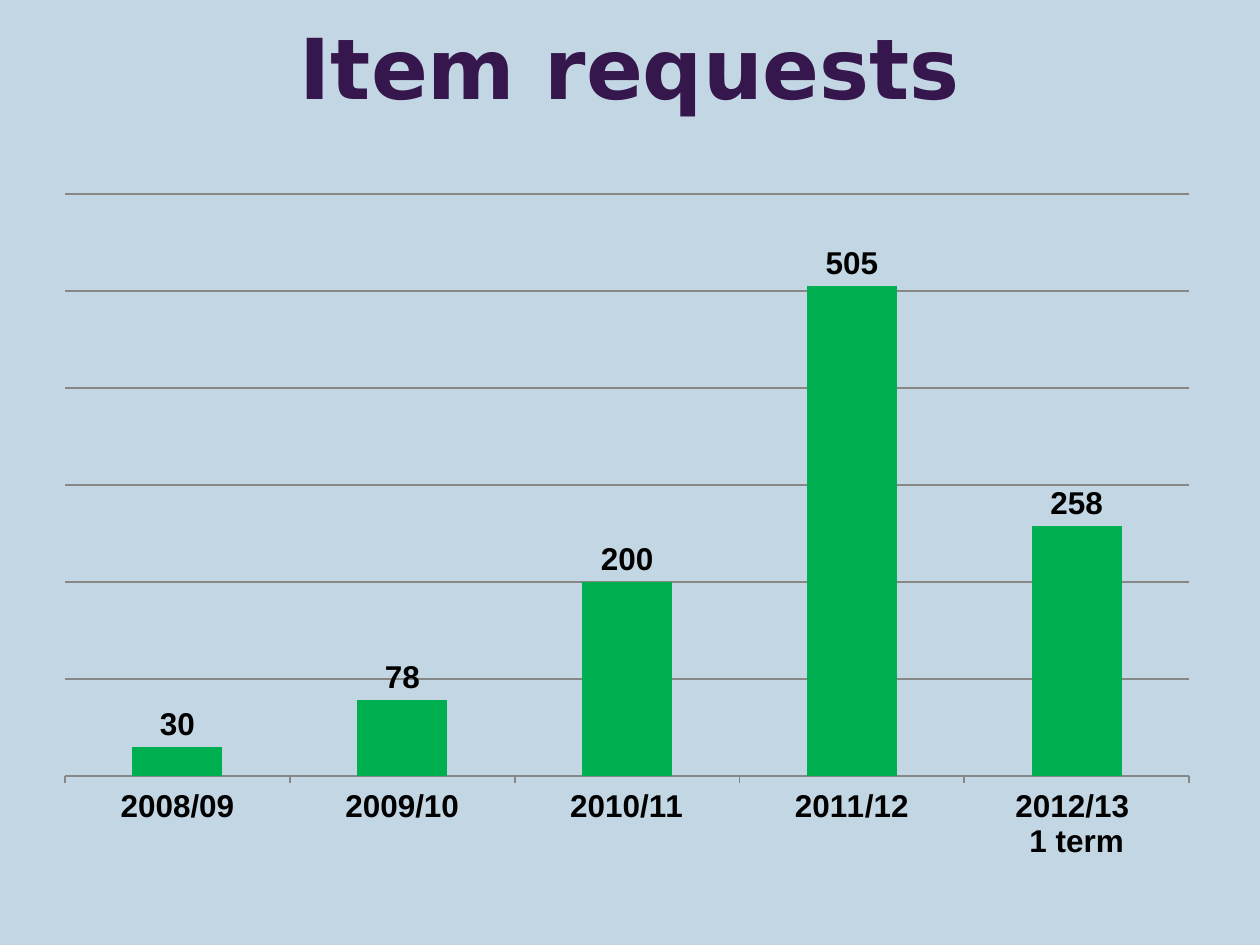
from dataclasses import dataclass

import lxml.etree
import pptx
import pptx.chart.data
import pptx.dml.color
import pptx.enum.chart
import pptx.enum.text
import pptx.util


@dataclass(frozen=True)
class Theme:
    background: str = "C3D6E3"
    title: str = "36174D"
    bar: str = "00B050"
    grid: str = "878787"
    text: str = "000000"
    title_font: str = "DejaVu Sans"
    chart_font: str = "Arial"
    title_size: int = 48
    label_size: int = 18
    base_size: int = 10
    line_width: float = 1


@dataclass(frozen=True)
class Area:
    """A rectangle given as shares of its container."""
    left: float
    top: float
    width: float
    height: float


@dataclass(frozen=True)
class YearCount:
    year: str
    requests: int


THEME = Theme()
PAGE_WIDTH, PAGE_HEIGHT = pptx.util.Inches(10), pptx.util.Inches(7.5)
TITLE_AREA = Area(0.05, -0.004, 0.9, 0.147)
CHART_AREA = Area(0.051, 0.185, 0.9, 0.744)
PLOT_AREA = Area(0, 0.027, 0.992, 0.828)
REQUESTS = [
    YearCount("2008/09", 30),
    YearCount("2009/10", 78),
    YearCount("2010/11", 200),
    YearCount("2011/12", 505),
    YearCount("2012/13 \n1 term", 258),
]


def color(code: str) -> pptx.dml.color.RGBColor:
    return pptx.dml.color.RGBColor.from_string(code)


def page_lengths(area: Area) -> tuple[int, int, int, int]:
    return (round(area.left * PAGE_WIDTH), round(area.top * PAGE_HEIGHT),
            round(area.width * PAGE_WIDTH), round(area.height * PAGE_HEIGHT))


def format_font(font, *, size: float, name: str = THEME.chart_font,
                ink: str = THEME.text, bold: bool = False) -> None:
    font.name, font.size, font.bold = name, pptx.util.Pt(size), bold
    font.color.rgb = color(ink)


def write_text(box, text: str, **font_format) -> None:
    frame = box.text_frame
    frame.word_wrap = True
    frame.vertical_anchor = pptx.enum.text.MSO_ANCHOR.MIDDLE
    para = frame.paragraphs[0]
    para.alignment = pptx.enum.text.PP_ALIGN.CENTER
    span = para.add_run()
    span.text = text
    format_font(span.font, **font_format)


def format_line(line) -> None:
    line.color.rgb = color(THEME.grid)
    line.width = pptx.util.Pt(THEME.line_width)


def place_plot(chart, area: Area) -> None:
    """Fix the inner plot area inside the chart frame."""
    plot_area = chart.plots[0]._element.getparent()
    namespace = lxml.etree.QName(plot_area).namespace
    for old in plot_area.findall(f"{{{namespace}}}layout"):
        plot_area.remove(old)
    layout = lxml.etree.Element(f"{{{namespace}}}layout")
    manual = lxml.etree.SubElement(layout, f"{{{namespace}}}manualLayout")
    settings = {"layoutTarget": "inner", "xMode": "edge", "yMode": "edge",
                "x": area.left, "y": area.top, "w": area.width, "h": area.height}
    for tag, value in settings.items():
        lxml.etree.SubElement(manual, f"{{{namespace}}}{tag}", val=str(value))
    plot_area.insert(0, layout)


def add_request_chart(page, counts: list[YearCount]) -> None:
    chart_data = pptx.chart.data.CategoryChartData()
    chart_data.categories = [count.year for count in counts]
    chart_data.add_series("Series 1", [count.requests for count in counts])
    chart = page.shapes.add_chart(
        pptx.enum.chart.XL_CHART_TYPE.COLUMN_CLUSTERED,
        *page_lengths(CHART_AREA), chart_data).chart
    chart.has_title = chart.has_legend = False
    format_font(chart.font, size=THEME.base_size)

    # Bars and their values
    plot = chart.plots[0]
    plot.gap_width, plot.vary_by_categories = 150, False
    series = plot.series[0]
    series.format.fill.solid()
    series.format.fill.fore_color.rgb = color(THEME.bar)
    labels = series.data_labels
    labels.show_value = True
    labels.position = pptx.enum.chart.XL_LABEL_POSITION.OUTSIDE_END
    format_font(labels.font, size=THEME.label_size, bold=True)

    # Axes and gridlines
    years, scale = chart.category_axis, chart.value_axis
    years.major_tick_mark = pptx.enum.chart.XL_TICK_MARK.OUTSIDE
    format_line(years.format.line)
    format_font(years.tick_labels.font, size=THEME.label_size, bold=True)
    scale.minimum_scale, scale.maximum_scale, scale.major_unit = 0, 600, 100
    scale.has_major_gridlines = True
    format_line(scale.major_gridlines.format.line)
    scale.visible = False
    place_plot(chart, PLOT_AREA)


def main() -> None:
    deck = pptx.Presentation()
    deck.slide_width, deck.slide_height = PAGE_WIDTH, PAGE_HEIGHT
    page = deck.slides.add_slide(deck.slide_layouts[5])
    page.background.fill.solid()
    page.background.fill.fore_color.rgb = color(THEME.background)

    # Title
    title = page.shapes.title
    title.left, title.top, title.width, title.height = page_lengths(TITLE_AREA)
    write_text(title, "Item requests", size=THEME.title_size,
               name=THEME.title_font, ink=THEME.title, bold=True)

    # Chart
    add_request_chart(page, REQUESTS)
    deck.save("out.pptx")


if __name__ == "__main__":
    main()
